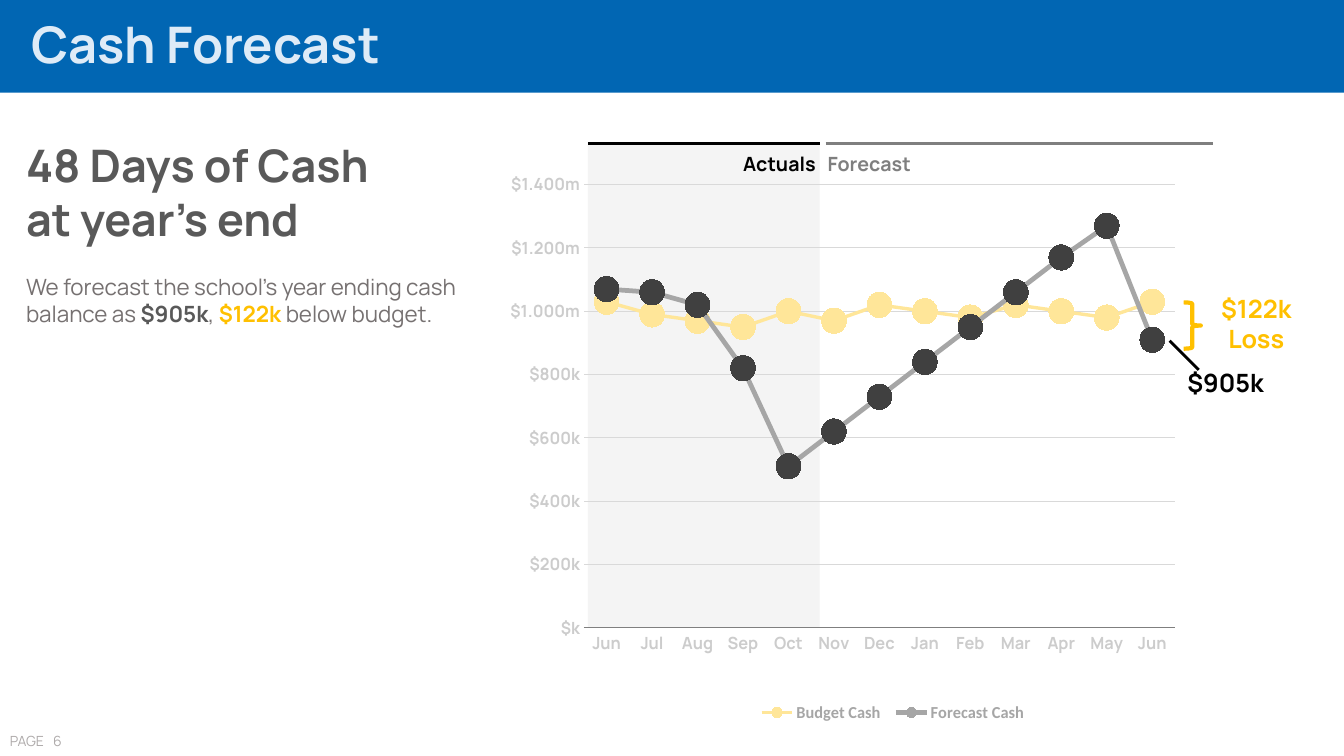
from lxml import etree
from pptx import Presentation
from pptx.chart.data import CategoryChartData
from pptx.dml.color import RGBColor
from pptx.enum.chart import XL_CHART_TYPE as ChartType, XL_LEGEND_POSITION as LegendPos
from pptx.enum.chart import XL_MARKER_STYLE as Marker, XL_TICK_MARK as Tick
from pptx.enum.shapes import MSO_CONNECTOR as Connector, MSO_SHAPE as Shape
from pptx.enum.text import MSO_ANCHOR as Anchor, PP_ALIGN as Align
from pptx.oxml.ns import qn
from pptx.util import Inches, Pt

BLUE = RGBColor(0x01, 0x66, 0xB3)
PALE_BLUE = RGBColor(0xDE, 0xEB, 0xF7)
BLACK = RGBColor(0, 0, 0)
CHARCOAL = RGBColor(0x40, 0x40, 0x40)
DARK_GRAY = RGBColor(0x59, 0x59, 0x59)
TEXT_GRAY = RGBColor(0x76, 0x71, 0x71)
MID_GRAY = RGBColor(0x7F, 0x7F, 0x7F)
LINE_GRAY = RGBColor(0xA6, 0xA6, 0xA6)
PAGE_GRAY = RGBColor(0xAF, 0xAB, 0xAB)
SHADE_GRAY = RGBColor(0xC9, 0xC9, 0xC9)
AXIS_GRAY = RGBColor(0xCC, 0xCC, 0xCC)
GRID_GRAY = RGBColor(0xD9, 0xD9, 0xD9)
GOLD = RGBColor(0xFF, 0xC0, 0x00)
PALE_GOLD = RGBColor(0xFF, 0xE6, 0x99)
FONT = "Manrope"


def write(text, paragraph, size, color, bold=False, align=Align.LEFT):
    paragraph.alignment = align
    run = paragraph.add_run()
    run.text = text
    run.font.name = FONT
    run.font.size = Pt(size)
    run.font.bold = bold
    run.font.color.rgb = color


def place(parent, index, **fractions):
    for old in parent.findall(qn("c:layout")):
        parent.remove(old)
    layout = etree.Element(qn("c:layout"))
    manual = etree.SubElement(layout, qn("c:manualLayout"))
    if index == 0:
        etree.SubElement(manual, qn("c:layoutTarget")).set("val", "inner")
    for mode in ("xMode", "yMode"):
        etree.SubElement(manual, qn("c:" + mode)).set("val", "edge")
    for side, fraction in fractions.items():
        etree.SubElement(manual, qn("c:" + side)).set("val", str(fraction))
    parent.insert(index, layout)


deck = Presentation()
deck.slide_width, deck.slide_height = Inches(13.33), Inches(7.5)
slide = deck.slides.add_slide(deck.slide_layouts[5])
shapes = slide.shapes

title = shapes.title
title.left, title.top, title.width, title.height = map(Inches, (0.21, 0.08, 13.33, 0.71))
title.text_frame.vertical_anchor = Anchor.MIDDLE
write("Cash Forecast", title.text_frame.paragraphs[0], 36, PALE_BLUE, bold=True)

band = shapes.add_shape(Shape.RECTANGLE, 0, 0, Inches(13.33), Inches(0.92))
band.fill.solid()
band.fill.fore_color.rgb = BLUE
actuals_area = shapes.add_shape(
    Shape.RECTANGLE, Inches(5.83), Inches(1.42), Inches(2.3), Inches(4.81))
actuals_area.fill.solid()
actuals_area.fill.fore_color.rgb = SHADE_GRAY
shade = actuals_area.fill._xPr.find(qn("a:solidFill"))[0]
etree.SubElement(shade, qn("a:alpha")).set("val", "20000")
for panel in (band, actuals_area):
    panel.line.fill.background()
    panel.shadow.inherit = False
    title.element.addprevious(panel.element)

cash = CategoryChartData()
cash.categories = "Jun Jul Aug Sep Oct Nov Dec Jan Feb Mar Apr May Jun".split()
budget = (1030, 990, 970, 950, 1000, 970, 1020, 1000, 980, 1020, 1000, 980, 1030)
forecast = (1070, 1060, 1020, 820, 510, 620, 730, 840, 950, 1060, 1170, 1270, 910)
cash.add_series("Budget Cash", [thousands * 1000 for thousands in budget])
cash.add_series("Forecast Cash", [thousands * 1000 for thousands in forecast])
chart = shapes.add_chart(ChartType.LINE_MARKERS, Inches(5.03), Inches(1.56),
                         Inches(7), Inches(5.8), cash).chart
chart.has_title = False
chart.font.name = "Calibri"
chart.font.size = Pt(10)
chart.font.color.rgb = BLACK
chart.plots[0].vary_by_categories = False

months, amounts = chart.category_axis, chart.value_axis
for axis in (months, amounts):
    axis.major_tick_mark = axis.minor_tick_mark = Tick.NONE
    labels = axis.tick_labels.font
    labels.name, labels.size, labels.bold = FONT, Pt(12), True
    labels.color.rgb = AXIS_GRAY
months.format.line.color.rgb = MID_GRAY
months.format.line.width = Pt(0.75)
amounts.minimum_scale, amounts.maximum_scale, amounts.major_unit = 0, 1400000, 200000
amounts.tick_labels.number_format = r'[>999999]\ "$"#.##0,,"m";"$"#,"k"'
amounts.tick_labels.number_format_is_linked = False
amounts.format.line.fill.background()
amounts.major_gridlines.format.line.color.rgb = GRID_GRAY
amounts.major_gridlines.format.line.width = Pt(0.75)

budget_line, forecast_line = chart.plots[0].series
for series, color, width, size, order in ((budget_line, PALE_GOLD, 2.5, 18, 1),
                                          (forecast_line, LINE_GRAY, 3.5, 20, 0)):
    series.smooth = False
    series.format.line.color.rgb = color
    series.format.line.width = Pt(width)
    series.marker.style = Marker.CIRCLE
    series.marker.size = size
    series.marker.format.fill.solid()
    series.marker.format.fill.fore_color.rgb = color
    series.marker.format.line.fill.background()
    series._element.find(qn("c:order")).set("val", str(order))
for month in range(len(forecast)):
    point = forecast_line.points[month]
    point.format.line.color.rgb = CHARCOAL
    point.format.line.width = Pt(3.5)
    point.marker.style = Marker.CIRCLE
    point.marker.size = 18
    point.marker.format.fill.solid()
    point.marker.format.fill.fore_color.rgb = CHARCOAL
    point.marker.format.line.fill.background()

chart.has_legend = True
legend = chart.legend
legend.position = LegendPos.BOTTOM
legend.include_in_layout = False
legend.font.size = Pt(12)
legend.font.bold = True
legend.font.color.rgb = LINE_GRAY
place(chart.plots[0]._element.getparent(), 0, x=0.086, y=0.047, w=0.859, h=0.758)
place(legend._element, 1, x=0.33, y=0.92, w=0.41, h=0.06)

loss_brace = shapes.add_shape(
    Shape.RIGHT_BRACE, Inches(11.74), Inches(3), Inches(0.17), Inches(0.46))
loss_brace.fill.background()
loss_brace.line.color.rgb = GOLD
loss_brace.line.width = Pt(3)
loss_brace.shadow.inherit = False

for x1, y1, x2, y2, color in (
    (5.83, 1.42, 8.13, 1.42, BLACK),
    (8.19, 1.42, 12.03, 1.42, MID_GRAY),
    (11.6, 3.38, 11.89, 3.67, BLACK),
):
    rule = shapes.add_connector(Connector.STRAIGHT, *map(Inches, (x1, y1, x2, y2)))
    rule.line.color.rgb = color
    rule.line.width = Pt(2)
    etree.SubElement(rule.element.spPr, qn("a:effectLst"))

for text, bounds, size, color, bold, align in (
    ("PAGE", (0, 7.22, 0.57, 0.27), 10, PAGE_GRAY, False, Align.LEFT),
    ("6", (0.43, 7.22, 0.43, 0.27), 10, PAGE_GRAY, False, Align.LEFT),
    ("$122k Loss", (11.94, 2.86, 1.04, 0.71), 18, GOLD, True, Align.CENTER),
    ("Actuals", (7.08, 1.46, 1.11, 0.34), 14, BLACK, True, Align.RIGHT),
    ("Forecast", (8.11, 1.46, 1.39, 0.34), 14, MID_GRAY, True, Align.LEFT),
    ("$905k", (11.46, 3.59, 1.39, 0.4), 18, BLACK, True, Align.CENTER),
):
    label = shapes.add_textbox(*map(Inches, bounds)).text_frame
    label.word_wrap = text != "PAGE"
    write(text, label.paragraphs[0], size, color, bold=bold, align=align)

summary = shapes.add_textbox(*map(Inches, (0.16, 1.32, 4.47, 2.52))).text_frame
summary.word_wrap = True
write("48 Days of Cash", summary.paragraphs[0], 32, DARK_GRAY, bold=True)
write("at year’s end", summary.add_paragraph(), 32, DARK_GRAY, bold=True)
balance = summary.add_paragraph()
balance.space_before = Pt(19.5)
for text, color, bold in (
    ("We forecast the school’s year ending cash balance as ", TEXT_GRAY, False),
    ("$905k", DARK_GRAY, True),
    (", ", TEXT_GRAY, False),
    ("$122k", GOLD, True),
    (" below budget.", TEXT_GRAY, False),
):
    write(text, balance, 16, color, bold=bold)

deck.save("out.pptx")
